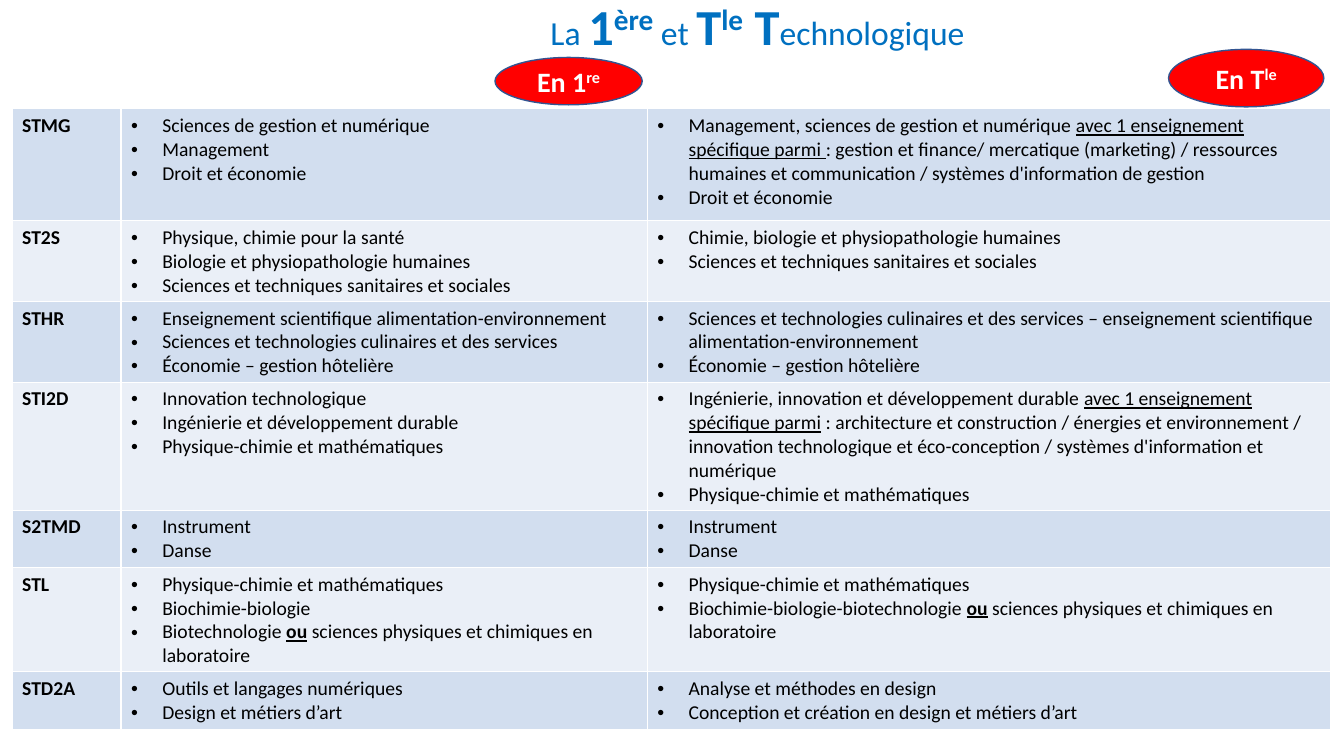
from itertools import product

from lxml.etree import SubElement
from pptx import Presentation
from pptx.dml.color import RGBColor
from pptx.enum.shapes import MSO_SHAPE
from pptx.enum.text import MSO_ANCHOR, MSO_AUTO_SIZE, PP_ALIGN
from pptx.oxml.ns import qn
from pptx.util import Inches, Pt

BLUE = RGBColor(0x00, 0x70, 0xC0)
RED = RGBColor(0xFF, 0x00, 0x00)
OUTLINE = RGBColor(0x32, 0x54, 0x91)
WHITE = RGBColor(0xFF, 0xFF, 0xFF)
BLACK = RGBColor(0x00, 0x00, 0x00)
BANDS = (RGBColor(0xD2, 0xDE, 0xEF), RGBColor(0xEA, 0xEF, 0xF7))

TITLE_ONLY = 5
SMALL = {"size": Pt(24)}
BIG = {"size": Pt(36), "bold": True}
RAISED = {"superscript": True}
UNDERLINED = {"underline": True}
OR = ("ou", {"bold": True, "underline": True})

TITLE = [("La ", SMALL), ("1", BIG), ("ère", BIG | RAISED), (" ", SMALL), ("et ", SMALL),
         ("T", BIG), ("le", BIG | RAISED), (" T", BIG), ("echnologique", SMALL)]

# Each series: code, row height, subjects in première, subjects in terminale.
# A subject is a string, or a list of strings and (text, format) pairs.
SERIES = [
    ("STMG", 1.11,
     ["Sciences de gestion et numérique", "Management", "Droit et économie"],
     [["Management, sciences de gestion et numérique ",
       ("avec 1 enseignement spécifique parmi ", UNDERLINED),
       ": gestion et finance/ mercatique (marketing) / ressources humaines et communication"
       " / systèmes d'information de gestion"],
      "Droit et économie"]),
    ("ST2S", 0.8,
     ["Physique, chimie pour la santé", "Biologie et physiopathologie humaines",
      "Sciences et techniques sanitaires et sociales"],
     ["Chimie, biologie et physiopathologie humaines",
      "Sciences et techniques sanitaires et sociales"]),
    ("STHR", 0.8,
     ["Enseignement scientifique alimentation-environnement",
      "Sciences et technologies culinaires et des services", "Économie – gestion hôtelière"],
     ["Sciences et technologies culinaires et des services – enseignement scientifique"
      " alimentation-environnement",
      "Économie – gestion hôtelière"]),
    ("STI2D", 1.27,
     ["Innovation technologique", "Ingénierie et développement durable",
      "Physique-chimie et mathématiques"],
     [["Ingénierie, innovation et développement durable ",
       ("avec 1 enseignement spécifique parmi", UNDERLINED),
       " : architecture et construction / énergies et environnement / innovation technologique"
       " et éco-conception / systèmes d'information et numérique"],
      "Physique-chimie et mathématiques"]),
    ("S2TMD", 0.57, ["Instrument", "Danse"], ["Instrument", "Danse"]),
    ("STL", 1.03,
     ["Physique-chimie et mathématiques", "Biochimie-biologie",
      ["Biotechnologie ", OR, " sciences physiques et chimiques en laboratoire"]],
     ["Physique-chimie et mathématiques",
      ["Biochimie-biologie-biotechnologie ", OR,
       " sciences physiques et chimiques en laboratoire"]]),
    ("STD2A", 0.57,
     ["Outils et langages numériques", "Design et métiers d’art"],
     ["Analyse et méthodes en design", "Conception et création en design et métiers d’art"]),
]
COLUMN_WIDTHS = (1.08, 5.22, 6.78)


class SlideBuilder:
    def __init__(self, slide, font="Calibri"):
        self.slide = slide
        self.font = font

    def add_runs(self, paragraph, pieces, color, **base):
        """Add runs, each with the base format and its own changes."""
        for piece in [pieces] if isinstance(pieces, str) else pieces:
            text, changes = (piece, {}) if isinstance(piece, str) else piece
            run = paragraph.add_run()
            run.text = text
            formats = {"name": self.font, "bold": False} | base | changes
            if formats.pop("superscript", False):
                run._r.get_or_add_rPr().set("baseline", "30000")
            for key, value in formats.items():
                setattr(run.font, key, value)
            run.font.color.rgb = color

    def title(self, pieces, left, top, width, height):
        title = self.slide.shapes.title
        place = {"left": left, "top": top, "width": width, "height": height}
        for key, value in place.items():
            setattr(title, key, Inches(value))
        frame = title.text_frame
        frame_format = {"word_wrap": False, "auto_size": MSO_AUTO_SIZE.SHAPE_TO_FIT_TEXT,
                        "vertical_anchor": MSO_ANCHOR.TOP}
        for key, value in frame_format.items():
            setattr(frame, key, value)
        paragraph = frame.paragraphs[0]
        paragraph.alignment = PP_ALIGN.LEFT
        self.add_runs(paragraph, pieces, BLUE)

    def badge(self, pieces, *place):
        badge = self.slide.shapes.add_shape(MSO_SHAPE.OVAL, *map(Inches, place))
        badge.shadow.inherit = False
        badge.fill.solid()
        badge.fill.fore_color.rgb = RED
        badge.line.color.rgb = OUTLINE
        badge.line.width = Pt(1)
        badge.text_frame.vertical_anchor = MSO_ANCHOR.MIDDLE
        paragraph = badge.text_frame.paragraphs[0]
        paragraph.alignment = PP_ALIGN.CENTER
        self.add_runs(paragraph, pieces, WHITE, size=Pt(20), bold=True)

    def bullet(self, paragraph):
        properties = paragraph._p.get_or_add_pPr()
        indent = Inches(0.31)
        properties.set("marL", str(indent))
        properties.set("indent", str(-indent))
        SubElement(properties, qn("a:buFont"), typeface="Arial")
        SubElement(properties, qn("a:buChar"), char="•")

    def cell(self, cell, fill):
        """Give a cell its white borders and band colour."""
        properties = cell._tc.get_or_add_tcPr()
        for side in ("L", "R", "T", "B"):
            border = SubElement(properties, qn(f"a:ln{side}"), w=str(Pt(1)))
            color = SubElement(border, qn("a:solidFill"))
            SubElement(color, qn("a:srgbClr"), val=str(WHITE))
        cell.fill.solid()
        cell.fill.fore_color.rgb = fill

    def series_table(self, series, left, top):
        heights = [row[1] for row in series]
        place = (left, top, sum(COLUMN_WIDTHS), sum(heights))
        table = self.slide.shapes.add_table(
            len(series), len(COLUMN_WIDTHS), *map(Inches, place)).table
        table.first_row = table.horz_banding = False
        for column, width in zip(table.columns, COLUMN_WIDTHS):
            column.width = Inches(width)
        for row, height in zip(table.rows, heights):
            row.height = Inches(height)
        for r, c in product(range(len(series)), range(len(COLUMN_WIDTHS))):
            code, _, *subjects = series[r]
            cell = table.cell(r, c)
            self.cell(cell, BANDS[r % 2])
            frame = cell.text_frame
            for i, text in enumerate(subjects[c - 1] if c else [code]):
                paragraph = frame.add_paragraph() if i else frame.paragraphs[0]
                if c:
                    self.bullet(paragraph)
                self.add_runs(paragraph, text, BLACK, size=Pt(14), bold=c == 0)


def main():
    deck = Presentation()
    deck.slide_width, deck.slide_height = Inches(13.33), Inches(7.5)
    builder = SlideBuilder(deck.slides.add_slide(deck.slide_layouts[TITLE_ONLY]))
    builder.title(TITLE, 5.36, -0.1, 4.44, 0.71)
    builder.series_table(SERIES, 0.12, 1.08)
    builder.badge(["En 1", ("re", RAISED)], 4.91, 0.57, 1.46, 0.47)
    builder.badge(["En T", ("le", RAISED)], 11.59, 0.49, 1.54, 0.57)
    deck.save("out.pptx")


if __name__ == "__main__":
    main()
